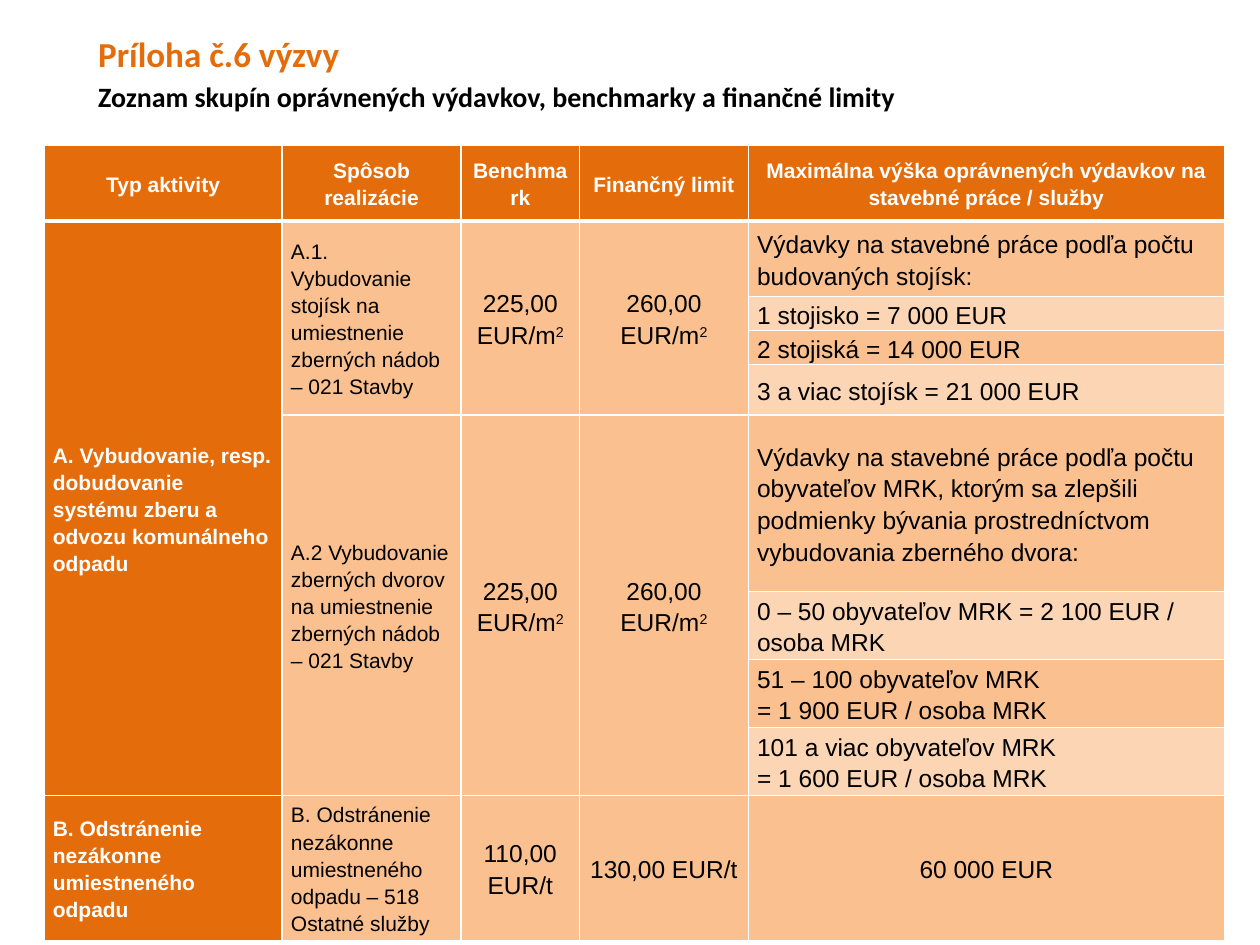
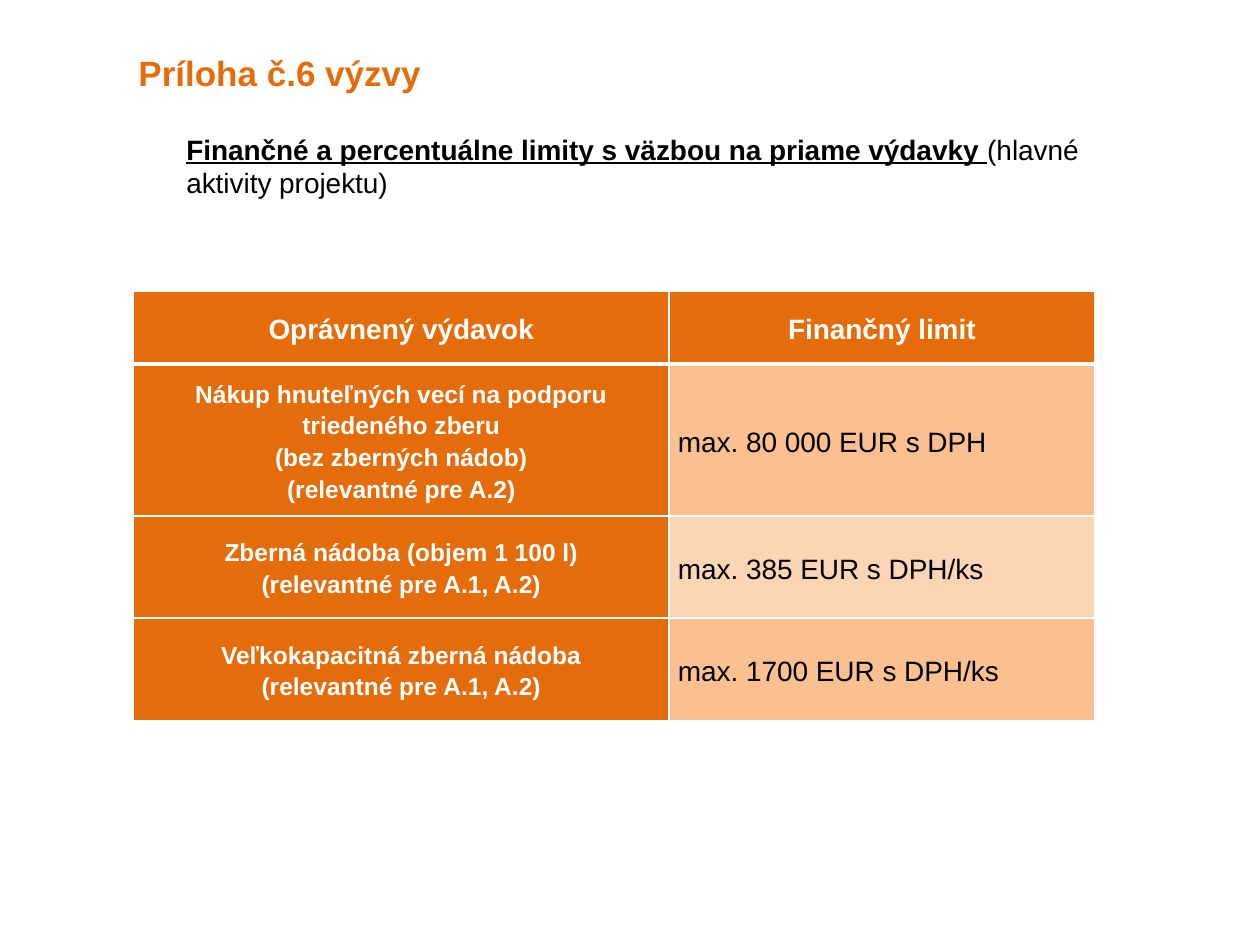
from dataclasses import dataclass

from lxml import etree
from pptx import Presentation
from pptx.dml.color import RGBColor
from pptx.enum.text import MSO_ANCHOR, PP_ALIGN
from pptx.oxml.ns import qn
from pptx.util import Inches, Pt

LEFT, CENTER, JUSTIFY = PP_ALIGN.LEFT, PP_ALIGN.CENTER, PP_ALIGN.JUSTIFY
MIDDLE = MSO_ANCHOR.MIDDLE


@dataclass(frozen=True)
class Theme:
    orange: str = "E46C0A"
    bands: tuple = ("FCD5B5", "FAC090")  # even rows, odd rows
    white: str = "FFFFFF"
    black: str = "000000"
    font: str = "Arial"
    heading_font: str = "Calibri"
    title: int = 20
    large: int = 16
    medium: int = 14
    small: int = 12


theme = Theme()
deck = Presentation()
deck.slide_width, deck.slide_height = Inches(10), Inches(7.5)
# One percent of the slide's width and height
X, Y = deck.slide_width // 100, deck.slide_height // 100
BLANK = deck.slide_layouts[6]


def format_span(span, size, color, bold, font=theme.font):
    span.font.name, span.font.size, span.font.bold = font, Pt(size), bold
    span.font.color.rgb = RGBColor.from_string(color)


def build_table(slide, left, top, columns, rows, styles, header_size, cells, merges=()):
    """Cells map (row, column) to text, where ^ starts a superscript; styles hold size and alignment by column."""
    table = slide.shapes.add_table(len(rows), len(columns), int(left * X), int(top * Y),
                                   int(sum(columns) * X), int(sum(rows) * Y)).table
    for column, width in zip(table.columns, columns):
        column.width = int(width * X)
    for row, height in zip(table.rows, rows):
        row.height = int(height * Y)
    for row in range(len(rows)):
        for column in range(len(columns)):
            cell = table.cell(row, column)
            cell.margin_left = cell.margin_right = Inches(0.07)
            cell.margin_top = cell.margin_bottom = 0
            cell.vertical_anchor = MIDDLE
            for side in "LRTB":
                heavy = (row == 0 and side == "B") or (row == 1 and side == "T")
                line = etree.SubElement(cell._tc.get_or_add_tcPr(), qn("a:ln" + side),
                                        w=str(Pt(3 if heavy else 1)))
                etree.SubElement(etree.SubElement(line, qn("a:solidFill")),
                                 qn("a:srgbClr"), val=theme.white)
            strong = row == 0 or column == 0
            cell.fill.solid()
            cell.fill.fore_color.rgb = RGBColor.from_string(
                theme.orange if strong else theme.bands[row % 2])
            if (row, column) not in cells:
                continue
            size, align = (header_size, CENTER) if row == 0 else styles[column]
            cell.text_frame.text = cells[row, column].replace("^", "")
            for para in cell.text_frame.paragraphs:
                para.alignment, para.line_spacing = align, 1.15
                base, mark, raised = cells[row, column].partition("^")
                if mark:
                    para.runs[0].text = base
                    para.add_run().text = raised
                    para.runs[1].font._element.set("baseline", "30000")
                for span in para.runs:
                    format_span(span, size, theme.white if strong else theme.black, strong)
    for first, last in merges:
        table.cell(*first).merge(table.cell(*last))
    return table


# Headings: box in percent, font, then for the subtitle its spans, gap above and first-line indent
HANGING = -0.38
headings = [
    ((5.9, 2.8, 83.5, 18.8), theme.heading_font,
     [("Zoznam skupín oprávnených výdavkov, benchmarky a finančné limity", True, False)], 3, HANGING),
    ((9.1, 4.8, 81.9, 26), theme.font,
     [("Finančné a percentuálne limity s väzbou na priame výdavky ", True, True),
      ("(hlavné aktivity projektu)", False, False)], 22, 0),
]
slides = []
for (left, top, width, height), font, subtitle, gap, indent in headings:
    slide = deck.slides.add_slide(BLANK)
    slides.append(slide)
    box = slide.shapes.add_textbox(int(left * X), int(top * Y), int(width * X), int(height * Y))
    frame = box.text_frame
    frame.word_wrap = True
    lines = [([("Príloha č.6 výzvy", True, False)], 4, HANGING, theme.title, theme.orange),
             (subtitle, gap, indent, theme.large, theme.black)]
    for number, (spans, space, first_line, size, color) in enumerate(lines):
        para = frame.add_paragraph() if number else frame.paragraphs[0]
        para.alignment = JUSTIFY if first_line else LEFT
        para.space_before = Pt(space)
        properties = para._p.get_or_add_pPr()
        properties.set("marL", str(Inches(0.47)))
        properties.set("indent", str(Inches(first_line)))
        for text, bold, underline in spans:
            span = para.add_run()
            span.text = text
            format_span(span, size, color, bold, font)
            span.font.underline = underline

# Slide 1: benchmarks and limits by type of activity
limits = {
    (0, 0): "Typ aktivity",
    (0, 1): "Spôsob realizácie",
    (0, 2): "Benchmark",
    (0, 3): "Finančný limit",
    (0, 4): "Maximálna výška oprávnených výdavkov na stavebné práce / služby",
    (1, 0): "A. Vybudovanie, resp. dobudovanie systému zberu a odvozu komunálneho odpadu",
    (1, 1): "A.1. Vybudovanie stojísk na umiestnenie zberných nádob – 021 Stavby",
    (5, 1): "A.2 Vybudovanie zberných dvorov na umiestnenie zberných nádob – 021 Stavby",
    (9, 0): "B. Odstránenie nezákonne umiestneného odpadu",
    (9, 1): "B. Odstránenie nezákonne umiestneného odpadu – 518 Ostatné služby",
    (9, 2): "110,00 EUR/t",
    (9, 3): "130,00 EUR/t",
}
for row in (1, 5):
    limits[row, 2] = "225,00 EUR/m^2"
    limits[row, 3] = "260,00 EUR/m^2"
maximums = [
    "Výdavky na stavebné práce podľa počtu budovaných stojísk:",
    "1 stojisko = 7 000 EUR",
    "2 stojiská = 14 000 EUR",
    "3 a viac stojísk = 21 000 EUR",
    "Výdavky na stavebné práce podľa počtu obyvateľov MRK, ktorým sa zlepšili "
    "podmienky bývania prostredníctvom vybudovania zberného dvora:",
    "0 – 50 obyvateľov MRK = 2 100 EUR / osoba MRK",
    "51 – 100 obyvateľov MRK\n= 1 900 EUR / osoba MRK",
    "101 a viac obyvateľov MRK\n= 1 600 EUR / osoba MRK",
    "60 000 EUR",
]
for row, maximum in enumerate(maximums, start=1):
    limits[row, 4] = maximum
merges = [((1, 0), (8, 0))] + [((row, column), (row + 3, column))
                               for row in (1, 5) for column in (1, 2, 3)]
limit_table = build_table(
    slides[0], 3.5, 15.4, [18.9, 14.2, 9.4, 13.4, 37.8],
    [8, 8, 3.6, 3.6, 5.33, 18.67, 7.2, 7.2, 7.2, 15.2],
    [(theme.small, LEFT)] * 2 + [(theme.medium, CENTER)] * 2 + [(theme.medium, LEFT)],
    theme.small, limits, merges)
limit_table.cell(9, 4).text_frame.paragraphs[0].alignment = CENTER

# Slide 2: limits on direct expenses
expenses = [
    ("Oprávnený výdavok", "Finančný limit"),
    ("Nákup hnuteľných vecí na podporu triedeného zberu\n(bez zberných nádob)\n(relevantné pre A.2)",
     "max. 80 000 EUR s DPH"),
    ("Zberná nádoba (objem 1 100 l)\n(relevantné pre A.1, A.2)", "max. 385 EUR s DPH/ks"),
    ("Veľkokapacitná zberná nádoba\n(relevantné pre A.1, A.2)", "max. 1700 EUR s DPH/ks"),
]
expense_table = build_table(
    slides[1], 10.6, 30.8, [42.5, 33.8], [7.73, 16.1, 10.8, 10.8],
    [(theme.medium, CENTER), (theme.large, LEFT)], theme.large,
    {(row, column): text for row, pair in enumerate(expenses) for column, text in enumerate(pair)})
for cell in expense_table.rows[0].cells:
    para = cell.text_frame.paragraphs[0]
    para.space_before = para.space_after = Pt(6)

deck.save("out.pptx")
